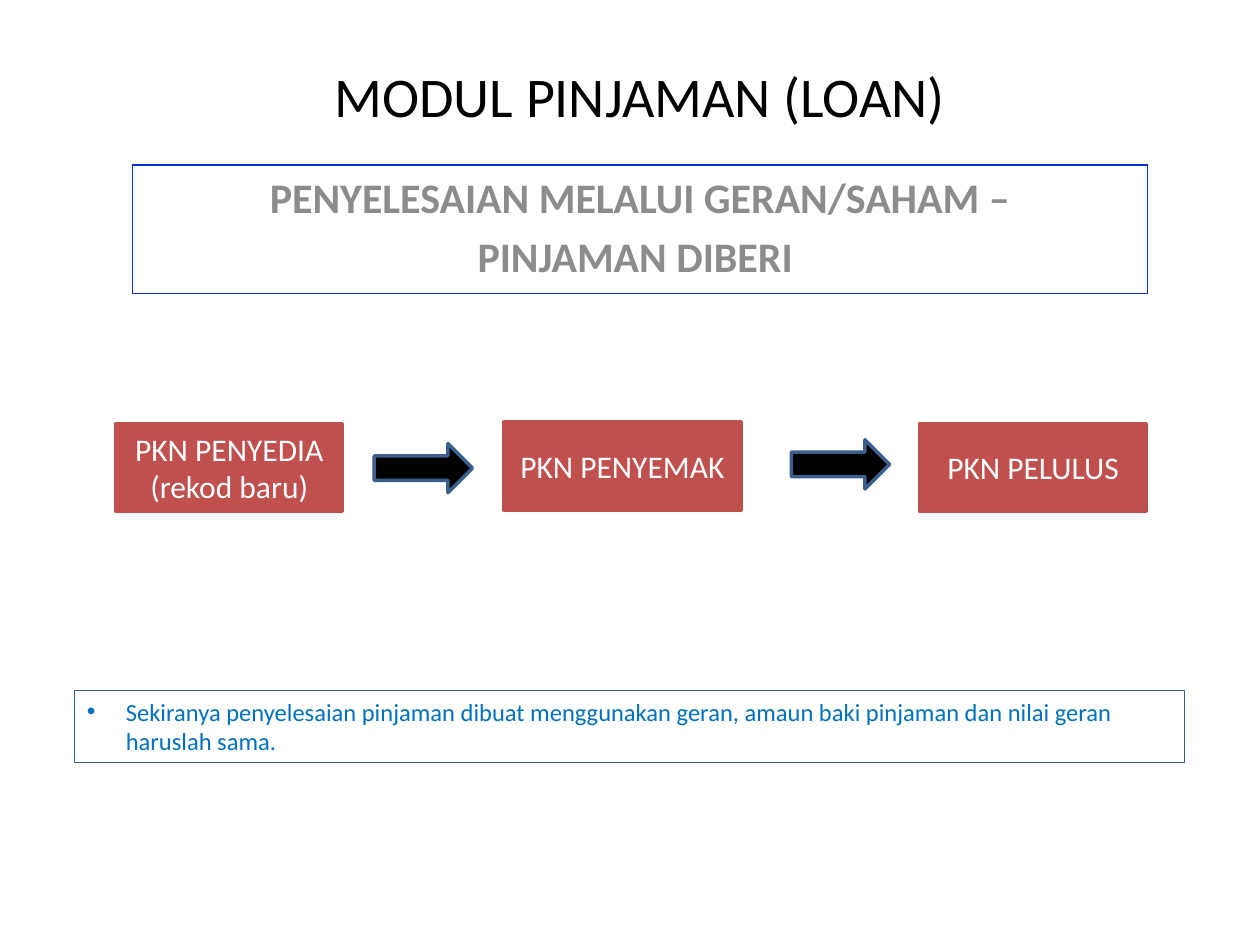
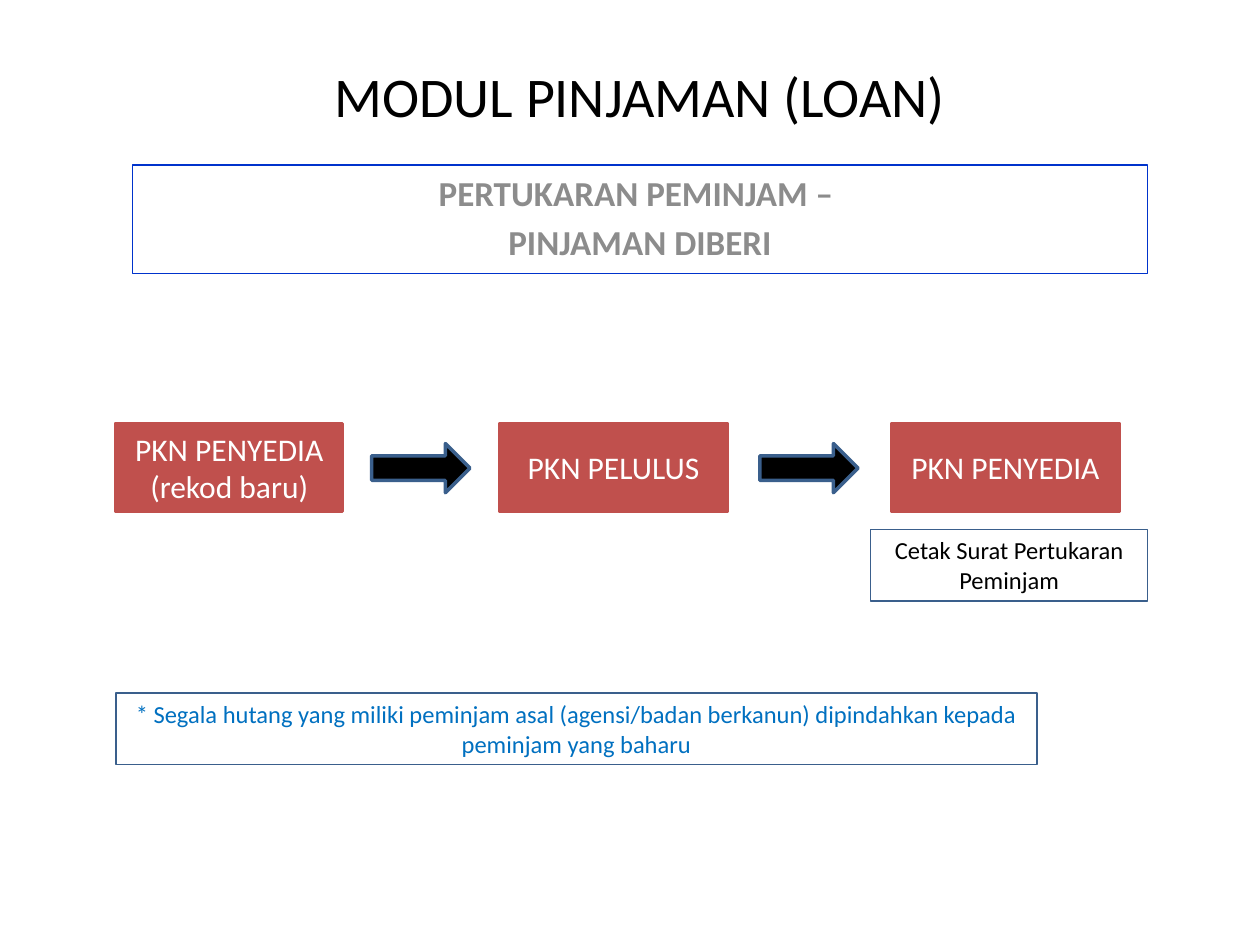
from lxml import etree
from pptx import Presentation
from pptx.dml.color import RGBColor
from pptx.enum.shapes import MSO_SHAPE
from pptx.enum.text import MSO_ANCHOR, MSO_AUTO_SIZE, PP_ALIGN
from pptx.oxml.ns import qn
from pptx.util import Inches, Pt

RECTANGLE, ARROW = MSO_SHAPE.RECTANGLE, MSO_SHAPE.RIGHT_ARROW
TOP, MIDDLE = MSO_ANCHOR.TOP, MSO_ANCHOR.MIDDLE
LEFT, CENTER = PP_ALIGN.LEFT, PP_ALIGN.CENTER
NO_FIT = MSO_AUTO_SIZE.NONE

FONT = "Calibri"
TITLE = "MODUL PINJAMAN (LOAN)"
TITLE_BOX = (1.93, 0.44, 6.3, 0.64)
BLACK, WHITE, GREY = "000000", "FFFFFF", "8C8C8C"
RED, NAVY, BLUE, NOTE_BLUE = "C0504D", "3A5F8C", "0033CC", "0070C0"
TITLE_ONLY = 5
STEP_WIDTH, STEP_HEIGHT = 1.8, 0.7
ARROW_WIDTH, ARROW_HEIGHT = 0.78, 0.39
NOTE_HEIGHT, NOTE_SIZE = 0.57, 14


def colour(value):
    """Turn a hex string into a colour."""
    return RGBColor.from_string(value)


def write(shape, lines, size, text_colour, align=CENTER, anchor=TOP, bold=False, gap=0):
    """Write one paragraph per line, with a gap in points between them."""
    frame = shape.text_frame
    frame_format = {"word_wrap": True, "auto_size": NO_FIT, "vertical_anchor": anchor}
    for name, value in frame_format.items():
        setattr(frame, name, value)
    frame.text = "\n".join(lines)
    font_format = {"name": FONT, "size": Pt(size), "bold": bold}
    for number, para in enumerate(frame.paragraphs):
        para.alignment = align
        para.space_before = Pt(gap if number else 0)
        for span in para.runs:
            for name, value in font_format.items():
                setattr(span.font, name, value)
            span.font.color.rgb = colour(text_colour)


def add_box(page, box, line, width, fill=None, kind=RECTANGLE):
    """Add an outlined preset shape, filled if a fill is given."""
    shape = page.shapes.add_shape(kind, *map(Inches, box))
    shape.shadow.inherit = False
    shape.line.color.rgb = colour(line)
    shape.line.width = Pt(width)
    if fill:
        shape.fill.solid()
        shape.fill.fore_color.rgb = colour(fill)
    else:
        shape.fill.background()
    return shape


def add_heading(page, lines, height, size):
    """Place the title and the framed module heading below it."""
    title = page.shapes.title
    for name, value in zip(("left", "top", "width", "height"), TITLE_BOX):
        setattr(title, name, Inches(value))
    write(title, [TITLE], 32, BLACK)
    frame = add_box(page, (1.05, 1.31, 8.06, height), BLUE, 0.75)
    write(frame, lines, size, GREY, bold=True, gap=size * 0.2)


def add_step(page, lines, left, top=3.36, width=STEP_WIDTH):
    """Add one red step of the approval flow."""
    step = add_box(page, (left, top, width, STEP_HEIGHT), RED, 2, RED)
    write(step, lines, 18, WHITE, anchor=MIDDLE)


def add_arrow(page, left, top=3.52):
    """Add a black block arrow between two steps."""
    add_box(page, (left, top, ARROW_WIDTH, ARROW_HEIGHT), NAVY, 2, BLACK, ARROW)


def add_note(page, text, left, top, width, text_colour=NOTE_BLUE, align=CENTER):
    """Add a framed note and return it."""
    note = add_box(page, (left, top, width, NOTE_HEIGHT), NAVY, 0.75)
    write(note, [text], NOTE_SIZE, text_colour, align)
    return note


def add_bullet(para, indent):
    """Give a paragraph a round bullet with a hanging indent."""
    properties = para._p.get_or_add_pPr()
    properties.set("marL", str(Inches(indent)))
    properties.set("indent", str(-Inches(indent)))
    etree.SubElement(properties, qn("a:buFont"), typeface="Arial")
    etree.SubElement(properties, qn("a:buChar"), char="•")


def build_settlement(page):
    """Build the slide on settlement through grants or shares."""
    add_heading(page, ["PENYELESAIAN MELALUI GERAN/SAHAM –", "PINJAMAN DIBERI "], 1.02, 24)
    add_step(page, ["PKN PENYEDIA", "(rekod baru)"], 0.92)
    add_arrow(page, 2.97)
    add_step(page, ["PKN PENYEMAK"], 4, 3.35, 1.88)
    add_arrow(page, 6.28, 3.49)
    add_step(page, ["PKN PELULUS"], 7.3)
    note = add_note(
        page,
        "Sekiranya penyelesaian pinjaman dibuat menggunakan geran, "
        "amaun baki pinjaman dan nilai geran haruslah sama.",
        0.59, 5.48, 8.81, align=LEFT,
    )
    add_bullet(note.text_frame.paragraphs[0], 0.31)


def build_borrower_change(page):
    """Build the slide on the change of borrower."""
    add_heading(page, ["PERTUKARAN PEMINJAM – ", "PINJAMAN DIBERI"], 0.86, 20)
    add_step(page, ["PKN PENYEDIA", "(rekod baru)"], 0.92)
    add_arrow(page, 2.95)
    add_step(page, ["PKN PELULUS"], 3.97)
    add_arrow(page, 6.03)
    add_step(page, ["PKN PENYEDIA"], 7.08)
    add_note(page, "Cetak Surat Pertukaran Peminjam", 6.91, 4.2, 2.2, BLACK)
    add_note(
        page,
        "* Segala hutang yang miliki peminjam asal (agensi/badan berkanun) "
        "dipindahkan kepada peminjam yang baharu",
        0.92, 5.5, 7.31,
    )


def main():
    """Build and save the deck."""
    deck = Presentation()
    deck.slide_width, deck.slide_height = Inches(10), Inches(7.5)
    for build in (build_settlement, build_borrower_change):
        build(deck.slides.add_slide(deck.slide_layouts[TITLE_ONLY]))
    deck.save("out.pptx")


if __name__ == "__main__":
    main()
